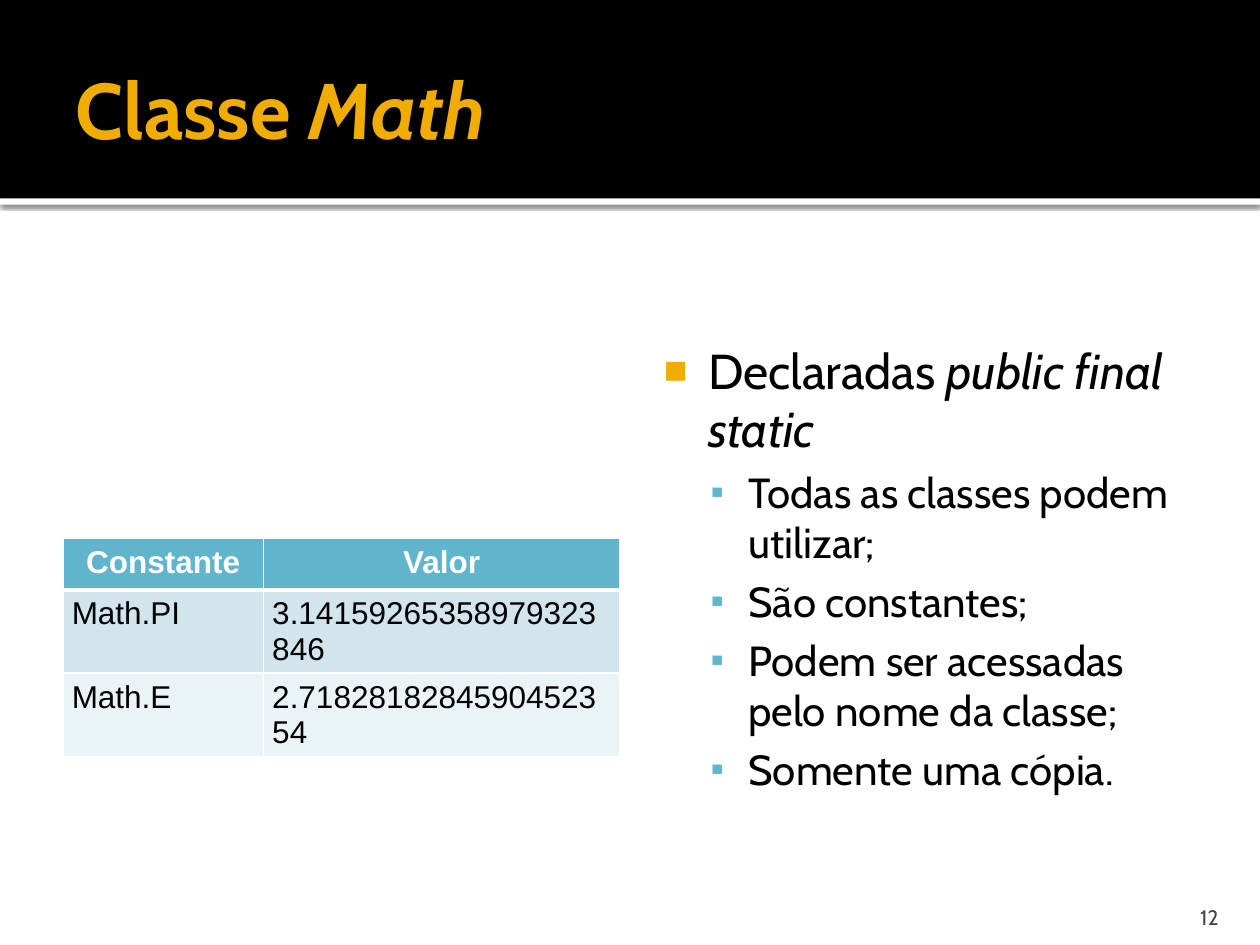
from lxml import etree
from pptx import Presentation
from pptx import util as u
from pptx.dml.color import RGBColor
from pptx.enum import shapes, text
from pptx.oxml import ns

WHITE = RGBColor(0xFF, 0xFF, 0xFF)
BLACK = RGBColor(0, 0, 0)
GOLD = RGBColor(0xF0, 0xAD, 0x00)
TEAL = RGBColor(0x60, 0xB5, 0xCC)
GRAY = RGBColor(0x45, 0x45, 0x45)
ROW_FILLS = [TEAL, RGBColor(0xD2, 0xE5, 0xEC), RGBColor(0xEA, 0xF3, 0xF6)]
W, H = u.Inches(10), u.Inches(7.5)
MARGIN, COL_W = 0.05, 0.442
TITLE = dict(name="Cabin", size=u.Pt(45), bold=True)
LEVELS = [
    dict(size=28, left=0.48, indent=-0.35, before=0, char="■", color=GOLD, pct=80),
    dict(size=24, left=0.8, indent=-0.3, before=4.8, char="▪", color=TEAL, pct=90),
]
ROWS = [
    ("Constante", "Valor"),
    ("Math.PI", "3.14159265358979323846"),
    ("Math.E", "2.7182818284590452354"),
]
POINTS = [
    (0, [("Declaradas ", False), ("public final static", True)]),
    (1, [("Todas as classes podem utilizar;", False)]),
    (1, [("São constantes;", False)]),
    (1, [("Podem ser acessadas pelo nome da classe;", False)]),
    (1, [("Somente uma cópia.", False)]),
]


def share(x, y, w, h):
    return int(x * W), int(y * H), int(w * W), int(h * H)


def sub(parent, tag, **attrs):
    return etree.SubElement(parent, ns.qn(tag), {k: str(v) for k, v in attrs.items()})


def add_run(p, words, color, **fmt):
    r = p.add_run()
    r.text = words
    for key, value in fmt.items():
        setattr(r.font, key, value)
    r.font.color.rgb = color


def set_frame(tf, anchor, insets):
    tf.word_wrap = True
    tf.auto_size = text.MSO_AUTO_SIZE.NONE
    tf.vertical_anchor = anchor
    for side, value in zip(("left", "top", "right", "bottom"), insets):
        setattr(tf, f"margin_{side}", u.Inches(value))


def add_bar(s, box, color):
    sp = s.shapes.add_shape(shapes.MSO_SHAPE.RECTANGLE, *box)
    sp.shadow.inherit = False
    sp.fill.solid()
    sp.fill.fore_color.rgb = color
    sp.line.fill.background()
    return sp


def add_header(s, box):
    x, y, w, h = box
    rule = add_bar(s, (x, y + h, w, u.Inches(0.05)), WHITE)
    effects = rule._element.spPr.find(ns.qn("a:effectLst"))
    shadow = sub(effects, "a:outerShdw", blurRad=u.Pt(2.5), dist=u.Pt(0.8),
                 dir=90 * 60000, algn="t", rotWithShape=0)
    sub(sub(shadow, "a:srgbClr", val=BLACK), "a:alpha", val=60000)
    add_bar(s, box, BLACK)

    title = s.shapes.title
    s.shapes._spTree.append(title._element)
    title.left, title.top = x + int(w * MARGIN), y + int(h * 0.11)
    title.width, title.height = int(w * 0.862), int(h * 0.87)
    set_frame(title.text_frame, text.MSO_ANCHOR.MIDDLE, (0.1, 0.05, 0.05, 0.05))
    p = title.text_frame.paragraphs[0]
    p.alignment = text.PP_ALIGN.LEFT
    add_run(p, "Classe ", GOLD, **TITLE)
    add_run(p, "Math", GOLD, italic=True, **TITLE)


def set_borders(cell, bottom):
    tcPr = cell._tc.get_or_add_tcPr()
    for side, width in zip("LRTB", (1, 1, 1, bottom)):
        ln = sub(tcPr, f"a:ln{side}", w=u.Pt(width))
        sub(sub(ln, "a:solidFill"), "a:srgbClr", val=WHITE)


def add_constants(s, box):
    table = s.shapes.add_table(len(ROWS), 2, *box).table
    for col, part in zip(table.columns, (0.36, 0.64)):
        col.width = int(box[2] * part)
    for i, (row, fill) in enumerate(zip(ROWS, ROW_FILLS)):
        head = i == 0
        for j, words in enumerate(row):
            cell = table.cell(i, j)
            set_borders(cell, 3 if head else 1)
            cell.fill.solid()
            cell.fill.fore_color.rgb = fill
            cell.margin_left = cell.margin_right = u.Inches(0.07)
            p = cell.text_frame.paragraphs[0]
            p.alignment = text.PP_ALIGN.CENTER if head else text.PP_ALIGN.LEFT
            add_run(p, words, WHITE if head else BLACK,
                    name="Arial", size=u.Pt(18), bold=head)


def set_bullet(p, level):
    pPr = p._p.get_or_add_pPr()
    pPr.set("marL", str(u.Inches(level["left"])))
    pPr.set("indent", str(u.Inches(level["indent"])))
    sub(sub(pPr, "a:buClr"), "a:srgbClr", val=level["color"])
    sub(pPr, "a:buSzPct", val=level["pct"] * 1000)
    sub(pPr, "a:buFont", typeface="Arial")
    sub(pPr, "a:buChar", char=level["char"])


def add_points(s, box):
    tf = s.shapes.add_textbox(*box).text_frame
    set_frame(tf, text.MSO_ANCHOR.MIDDLE, (0.06, 0.1, 0.1, 0.05))
    for i, (depth, runs) in enumerate(POINTS):
        p = tf.add_paragraph() if i else tf.paragraphs[0]
        level = LEVELS[depth]
        set_bullet(p, level)
        p.level = depth
        p.space_before = u.Pt(level["before"])
        for words, italic in runs:
            add_run(p, words, BLACK, name="Cabin", size=u.Pt(level["size"]), italic=italic)


def add_page_number(s, box):
    tf = s.shapes.add_textbox(*box).text_frame
    set_frame(tf, text.MSO_ANCHOR.BOTTOM, (0.1, 0.05, 0.1, 0))
    p = tf.paragraphs[0]
    p.alignment = text.PP_ALIGN.RIGHT
    add_run(p, "12", GRAY, name="Cabin", size=u.Pt(12))


def main():
    prs = Presentation()
    prs.slide_width, prs.slide_height = W, H
    s = prs.slides.add_slide(prs.slide_layouts[5])
    add_header(s, share(0, 0, 1, 0.21))
    add_constants(s, share(MARGIN, 0.57, COL_W, 0.163))
    add_points(s, share(1 - MARGIN - COL_W, 0.259, COL_W, 0.675))
    add_page_number(s, share(0.897, 0.944, 0.08, 0.04))
    prs.save("out.pptx")


if __name__ == "__main__":
    main()
